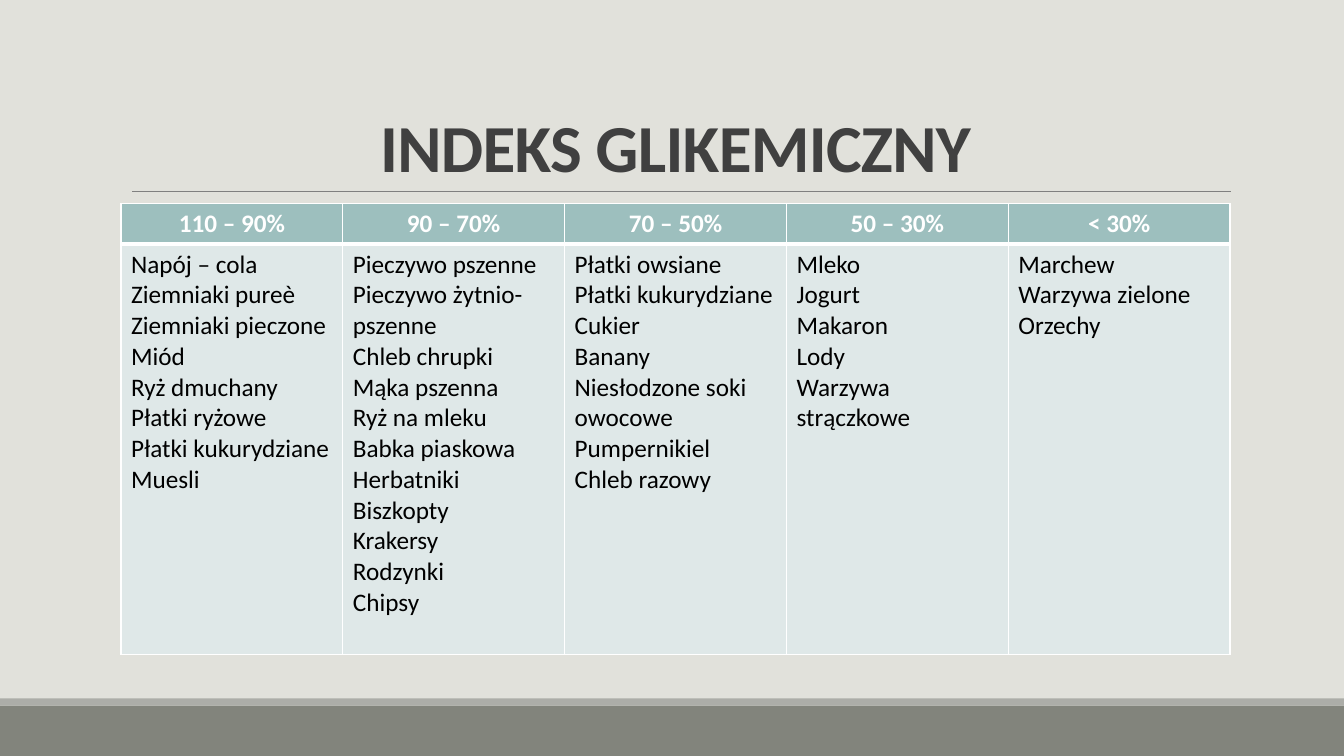
import pptx
import pptx.util
import pptx.dml.color
import pptx.enum.shapes
import pptx.enum.text
import pptx.oxml
import pptx.oxml.ns
from lxml import etree

Inches, Pt = pptx.util.Inches, pptx.util.Pt
ALIGN = pptx.enum.text.PP_ALIGN
KIND = pptx.enum.shapes

# Content
TITLE = "INDEKS GLIKEMICZNY"
FOODS = {
    "110 – 90%": ["Napój – cola", "Ziemniaki pureè", "Ziemniaki pieczone", "Miód",
                  "Ryż dmuchany", "Płatki ryżowe", "Płatki kukurydziane", "Muesli"],
    "90 – 70%": ["Pieczywo pszenne", "Pieczywo żytnio-pszenne", "Chleb chrupki",
                 "Mąka pszenna", "Ryż na mleku", "Babka piaskowa", "Herbatniki",
                 "Biszkopty", "Krakersy", "Rodzynki", "Chipsy"],
    "70 – 50%": ["Płatki owsiane", "Płatki kukurydziane", "Cukier", "Banany",
                 "Niesłodzone soki owocowe", "Pumpernikiel", "Chleb razowy"],
    "50 – 30%": ["Mleko", "Jogurt", "Makaron", "Lody", "Warzywa strączkowe"],
    "< 30%": ["Marchew", "Warzywa zielone", "Orzechy"],
}

# Layout and formats
WIDE, HIGH = 13.33, 7.5
LEFT, SPAN = 1.2, 11
TOP, ROWS = 2.02, (0.4, 4.07)
BANDS = [(7, 0.5, "82847C"), (6.93, 0.07, "ACADA8")]
HEAD = {"name": "Calibri", "size": Pt(18), "bold": True}
BODY = {**HEAD, "bold": False}
BIG = {**HEAD, "size": Pt(48)}
EDGES = {"lnL": 1, "lnR": 1, "lnT": 1, "lnB": 1}


def paint(part, tone):
    part.rgb = pptx.dml.color.RGBColor.from_string(tone)


def fill(part, tone):
    part.fill.solid()
    paint(part.fill.fore_color, tone)


def write(frame, lines, form, tone, align):
    for i, line in enumerate(lines):
        para = frame.paragraphs[0] if i == 0 else frame.add_paragraph()
        para.alignment = align
        run = para.add_run()
        run.text = line
        for key, value in form.items():
            setattr(run.font, key, value)
        paint(run.font.color, tone)


def edge(cell, sides):
    props = cell._tc.get_or_add_tcPr()
    for spot, (tag, width) in enumerate(sides.items()):
        line = pptx.oxml.parse_xml(
            f'<a:{tag} {pptx.oxml.ns.nsdecls("a")} w="{Pt(width)}"><a:solidFill>'
            f'<a:srgbClr val="FFFFFF"/></a:solidFill></a:{tag}>')
        props.insert(spot, line)


def main():
    deck = pptx.Presentation()
    deck.slide_width, deck.slide_height = Inches(WIDE), Inches(HIGH)
    slide = deck.slides.add_slide(deck.slide_layouts[6])
    fill(slide.background, "E1E1DB")
    shapes = slide.shapes

    # Bottom bands
    for top, height, tone in BANDS:
        band = shapes.add_shape(KIND.MSO_SHAPE.RECTANGLE, 0, Inches(top),
                                Inches(WIDE), Inches(height))
        band.shadow.inherit = False
        fill(band, tone)
        band.line.fill.background()

    # Rule under the title
    rule = shapes.add_connector(KIND.MSO_CONNECTOR.STRAIGHT, Inches(1.31),
                                Inches(1.9), Inches(12.21), Inches(1.9))
    paint(rule.line.color, "808080")
    rule.line.width = Pt(0.5)
    etree.SubElement(rule._element.spPr, pptx.oxml.ns.qn("a:effectLst"))

    # Title
    box = shapes.add_textbox(Inches(LEFT), Inches(0.31), Inches(SPAN), Inches(1.59))
    frame = box.text_frame
    frame.word_wrap = True
    frame.vertical_anchor = pptx.enum.text.MSO_ANCHOR.BOTTOM
    write(frame, [TITLE], BIG, "404040", ALIGN.CENTER)
    para = frame.paragraphs[0]
    para.line_spacing = 0.85
    para.runs[0].font._element.set("spc", "-50")

    # Table
    table = shapes.add_table(len(ROWS), len(FOODS), Inches(LEFT), Inches(TOP),
                             Inches(SPAN), Inches(sum(ROWS))).table
    for row, height in zip(table.rows, ROWS):
        row.height = Inches(height)
    for col, (span, foods) in enumerate(FOODS.items()):
        table.columns[col].width = Inches(SPAN / len(FOODS))
        head, body = table.cell(0, col), table.cell(1, col)
        fill(head, "9DBFBE")
        fill(body, "DFE8E8")
        write(head.text_frame, [span], HEAD, "FFFFFF", ALIGN.CENTER)
        write(body.text_frame, foods, BODY, "000000", ALIGN.LEFT)
        edge(head, {**EDGES, "lnB": 3})
        edge(body, {**EDGES, "lnT": 3})

    deck.save("out.pptx")


if __name__ == "__main__":
    main()
